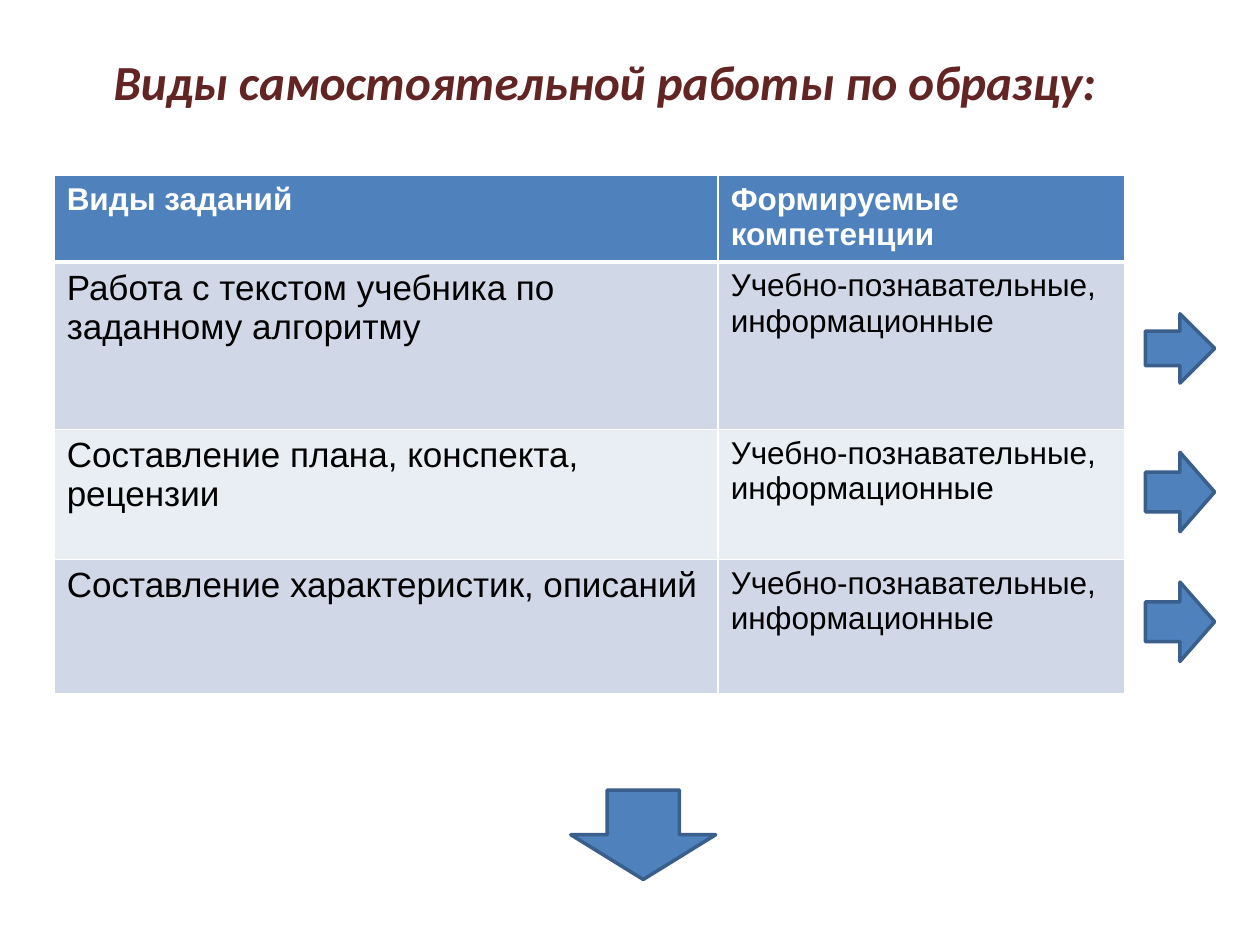
from lxml import etree
from pptx import Presentation
from pptx.dml.color import RGBColor
from pptx.enum.shapes import MSO_SHAPE
from pptx.enum.text import MSO_ANCHOR, PP_ALIGN
from pptx.oxml.ns import qn
from pptx.util import Inches, Pt

RIGHT_ARROW = MSO_SHAPE.RIGHT_ARROW
MIDDLE = MSO_ANCHOR.MIDDLE
CENTER = PP_ALIGN.CENTER

COLORS = {
    "title": "632523",
    "accent": "4F81BD",
    "outline": "3A5F8C",
    "odd": "D0D8E8",
    "even": "E9EDF4",
    "white": "FFFFFF",
    "black": "000000",
}

COMPETENCES = "Учебно-познавательные, информационные"
ROWS = [
    ("Виды заданий", "Формируемые компетенции"),
    ("Работа с текстом учебника по заданному алгоритму", COMPETENCES),
    ("Составление плана, конспекта, рецензии", COMPETENCES),
    ("Составление характеристик, описаний", COMPETENCES),
]
COL_WIDTHS = (5.27, 3.23)
ROW_HEIGHTS = (0.69, 1.33, 1.03, 1.07)
TABLE_LEFT, TABLE_TOP = 0.43, 1.39

# Row arrows share a column: top and height of each
ARROW_LEFT, ARROW_WIDTH = 9.09, 0.55
ROW_ARROWS = ((2.49, 0.55), (3.59, 0.63), (4.62, 0.63))


def rgb(name):
    return RGBColor.from_string(COLORS[name])


def add_run(p, text, font, size, color, bold=False, italic=False):
    r = p.add_run()
    r.text = text
    r.font.name = font
    r.font.size = Pt(size)
    r.font.bold = bold
    r.font.italic = italic
    r.font.color.rgb = rgb(color)


def add_title(slide, text):
    title = slide.shapes.title
    title.left, title.top = Inches(0.51), Inches(0.36)
    title.width, title.height = Inches(8.58), Inches(0.57)
    tf = title.text_frame
    tf.word_wrap = True
    tf.vertical_anchor = MIDDLE
    p = tf.paragraphs[0]
    p.alignment = CENTER
    add_run(p, text, "Calibri", 28, "title", bold=True, italic=True)


def set_borders(cell, widths):
    tcPr = cell._tc.get_or_add_tcPr()
    for side, width in zip("LRTB", widths):
        ln = etree.SubElement(tcPr, qn(f"a:ln{side}"), w=str(Pt(width)))
        fill = etree.SubElement(ln, qn("a:solidFill"))
        etree.SubElement(fill, qn("a:srgbClr"), val=COLORS["white"])


def fill_cell(cell, text, row, col):
    header = row == 0
    # The line under the header is thicker
    set_borders(cell, (1, 1, 3 if row == 1 else 1, 3 if header else 1))
    cell.fill.solid()
    cell.fill.fore_color.rgb = rgb("accent" if header else "odd" if row % 2 else "even")
    size = 20 if col == 0 and not header else 18
    add_run(cell.text_frame.paragraphs[0], text, "Arial", size,
            "white" if header else "black", bold=header)


def add_task_table(slide):
    frame = slide.shapes.add_table(
        len(ROWS), len(COL_WIDTHS), Inches(TABLE_LEFT), Inches(TABLE_TOP),
        Inches(sum(COL_WIDTHS)), Inches(sum(ROW_HEIGHTS)))
    table = frame.table
    for column, width in zip(table.columns, COL_WIDTHS):
        column.width = Inches(width)
    for row, height in zip(table.rows, ROW_HEIGHTS):
        row.height = Inches(height)
    for i, texts in enumerate(ROWS):
        for j, text in enumerate(texts):
            fill_cell(table.cell(i, j), text, i, j)


def add_arrow(slide, left, top, width, height, rotation=0):
    sp = slide.shapes.add_shape(RIGHT_ARROW, Inches(left), Inches(top),
                                Inches(width), Inches(height))
    sp.rotation = rotation
    sp.shadow.inherit = False
    sp.fill.solid()
    sp.fill.fore_color.rgb = rgb("accent")
    sp.line.color.rgb = rgb("outline")
    sp.line.width = Pt(2)


def main():
    prs = Presentation()
    prs.slide_width, prs.slide_height = Inches(10), Inches(7.5)
    slide = prs.slides.add_slide(prs.slide_layouts[5])

    add_title(slide, "Виды самостоятельной работы по образцу:")
    add_task_table(slide)

    # Arrows beside the rows, then the one pointing down
    for top, height in ROW_ARROWS:
        add_arrow(slide, ARROW_LEFT, top, ARROW_WIDTH, height)
    add_arrow(slide, 4.75, 6.05, 0.71, 1.15, rotation=90)

    prs.save("out.pptx")


if __name__ == "__main__":
    main()
